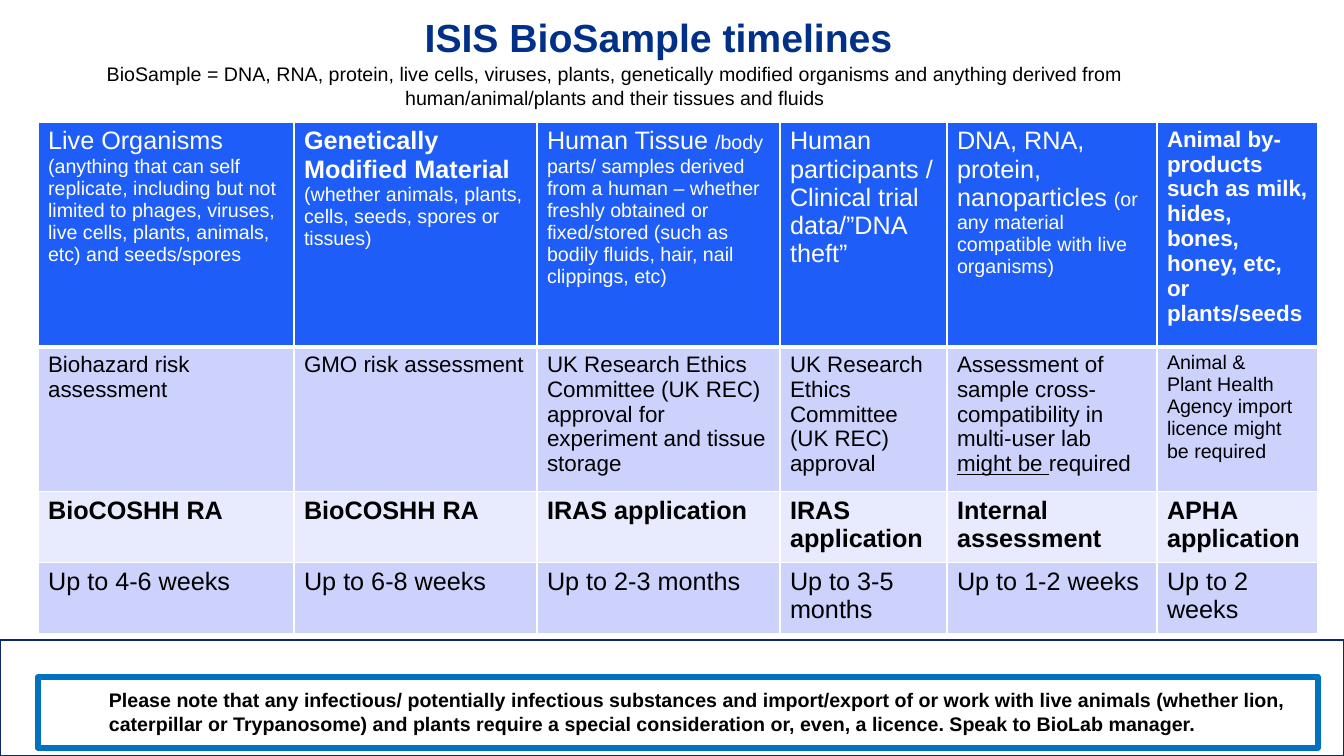
from dataclasses import dataclass
from typing import NamedTuple

from lxml import etree
from pptx import Presentation
from pptx.dml.color import RGBColor
from pptx.enum.shapes import MSO_SHAPE as Shape
from pptx.enum.text import MSO_ANCHOR as Anchor, PP_ALIGN as Align
from pptx.oxml.ns import qn
from pptx.util import Emu, Pt

SLIDE_W, SLIDE_H = 1344, 756
EMU_PER_PX = 12192000 / SLIDE_W
FONT = "Arial"
COLORS = {
    "white": "FFFFFF", "black": "000000", "title": "003088",
    "header": "1E5DF8", "band": "CDD2FC", "pale": "E8EAFE",
    "footer_line": "0D296D", "note_line": "0070C0",
}


class Box(NamedTuple):
    left: int
    top: int
    width: int
    height: int


class Span(NamedTuple):
    text: str
    size: int | None = None
    bold: bool | None = None
    underline: bool = False


@dataclass
class Row:
    height: int
    fill: str
    color: str
    size: int
    bold: bool
    cells: list[list[Span]]
    bottom_pt: int = 1


@dataclass
class Label:
    box: Box
    text: str
    size: int
    color: str = "black"
    bold: bool = False
    align: Align = Align.LEFT
    anchor: Anchor = Anchor.TOP
    spacing: float = 1.0


@dataclass
class Frame:
    box: Box
    line: str
    line_pt: float
    fill: str | None = None


def px(n: int) -> Emu:
    return Emu(round(n * EMU_PER_PX))


def rgb(name: str) -> RGBColor:
    return RGBColor.from_string(COLORS[name])


def set_font(font, size: int, color: str, bold: bool) -> None:
    font.name, font.size, font.bold = FONT, Pt(size), bold
    font.color.rgb = rgb(color)


def add_label(slide, label: Label) -> None:
    tf = slide.shapes.add_textbox(*map(px, label.box)).text_frame
    tf.word_wrap = True
    tf.vertical_anchor = label.anchor
    p = tf.paragraphs[0]
    p.text = label.text
    p.alignment, p.line_spacing = label.align, label.spacing
    set_font(p.font, label.size, label.color, label.bold)


def add_frame(slide, frame: Frame) -> None:
    s = slide.shapes.add_shape(Shape.RECTANGLE, *map(px, frame.box))
    s.shadow.inherit = False
    if frame.fill:
        s.fill.solid()
        s.fill.fore_color.rgb = rgb(frame.fill)
    else:
        s.fill.background()
    s.line.color.rgb = rgb(frame.line)
    s.line.width = Pt(frame.line_pt)


def set_borders(cell, bottom_pt: int) -> None:
    tcPr = cell._tc.get_or_add_tcPr()
    for i, (side, width) in enumerate(zip("LRTB", (1, 1, 1, bottom_pt))):
        ln = etree.Element(qn(f"a:ln{side}"), w=str(Pt(width)))
        fill = etree.SubElement(ln, qn("a:solidFill"))
        etree.SubElement(fill, qn("a:srgbClr"), val=COLORS["white"])
        tcPr.insert(i, ln)


def fill_cell(cell, row: Row, spans: list[Span]) -> None:
    cell.fill.solid()
    cell.fill.fore_color.rgb = rgb(row.fill)
    set_borders(cell, row.bottom_pt)
    p = cell.text_frame.paragraphs[0]
    set_font(p.font, row.size, row.color, row.bold)
    for span in spans:
        for i, line in enumerate(span.text.split("\n")):
            if i:
                p.add_line_break()
            r = p.add_run()
            r.text = line
            if span.size:
                r.font.size = Pt(span.size)
            if span.bold is not None:
                r.font.bold = span.bold
            if span.underline:
                r.font.underline = True


def add_timeline_table(slide, left: int, top: int, widths: list[int], rows: list[Row]) -> None:
    height = sum(row.height for row in rows)
    table = slide.shapes.add_table(
        len(rows), len(widths), px(left), px(top), px(sum(widths)), px(height)).table
    table.first_row = table.horz_banding = False
    for column, width in zip(table.columns, widths):
        column.width = px(width)
    for i, row in enumerate(rows):
        table.rows[i].height = px(row.height)
        for j, spans in enumerate(row.cells):
            fill_cell(table.cell(i, j), row, spans)


def plain(*texts: str) -> list[list[Span]]:
    return [[Span(text)] for text in texts]


COLUMN_WIDTHS = [256, 243, 243, 167, 210, 161]
ROWS = [
    Row(225, "header", "white", 18, False, [
        [Span("Live Organisms "),
         Span("(anything that can self replicate, including but not limited to phages, "
              "viruses, live cells, plants, animals, etc) and seeds/spores", 14)],
        [Span("Genetically Modified Material ", bold=True),
         Span("(whether animals, plants, cells, seeds, spores or tissues)", 14)],
        [Span("Human Tissue "),
         Span("/body parts/ samples derived from a human – whether freshly obtained or "
              "fixed/stored (such as bodily fluids, hair, nail clippings, etc)", 14)],
        [Span("Human participants /Clinical trial data/”DNA theft”")],
        [Span("DNA, RNA, protein, nanoparticles "),
         Span("(or any material compatible with live organisms)", 14)],
        [Span("Animal by-products such as milk, hides, bones, honey, etc, or plants/seeds",
              16, True)],
    ], bottom_pt=3),
    Row(144, "band", "black", 16, False, [
        *plain("Biohazard risk assessment", "GMO risk assessment",
               "UK Research Ethics Committee (UK REC) approval for experiment and tissue storage",
               "UK Research Ethics Committee (UK REC) approval"),
        [Span("Assessment of sample cross-compatibility in multi-user lab "),
         Span("might be ", underline=True), Span("required")],
        [Span("Animal &\nPlant Health\nAgency import licence might be required", 14)],
    ]),
    Row(71, "pale", "black", 18, True, plain(
        "BioCOSHH RA", "BioCOSHH RA", "IRAS application", "IRAS application",
        "Internal assessment", "APHA application")),
    Row(71, "band", "black", 18, False, plain(
        "Up to 4-6 weeks", "Up to 6-8 weeks", "Up to 2-3 months", "Up to 3-5 months",
        "Up to 1-2 weeks", "Up to 2 weeks")),
]
FOOTER = Frame(Box(0, 640, SLIDE_W, 116), "footer_line", 1, "white")
NOTE_FRAME = Frame(Box(38, 677, 1280, 71), "note_line", 4.25)
TITLE = Label(Box(79, -3, 1159, 86), "ISIS BioSample timelines", 28, "title", True,
              Align.CENTER, Anchor.MIDDLE, 0.9)
DEFINITION = Label(
    Box(47, 57, 1136, 57),
    "BioSample = DNA, RNA, protein, live cells, viruses, plants, genetically modified organisms "
    "and anything derived from human/animal/plants and their tissues and fluids",
    14, align=Align.CENTER)
NOTE = Label(
    Box(99, 683, 1245, 57),
    "Please note that any infectious/ potentially infectious substances and import/export of or "
    "work with live animals (whether lion, caterpillar or Trypanosome) and plants require a "
    "special consideration or, even, a licence. Speak to BioLab manager.", 14, bold=True)


def main() -> None:
    prs = Presentation()
    prs.slide_width, prs.slide_height = px(SLIDE_W), px(SLIDE_H)
    slide = prs.slides.add_slide(prs.slide_layouts[6])
    # Footer panel and headings
    add_frame(slide, FOOTER)
    add_label(slide, TITLE)
    add_label(slide, DEFINITION)
    # Timelines by sample type
    add_timeline_table(slide, 38, 122, COLUMN_WIDTHS, ROWS)
    # Framed note
    add_label(slide, NOTE)
    add_frame(slide, NOTE_FRAME)
    prs.save("out.pptx")


if __name__ == "__main__":
    main()
